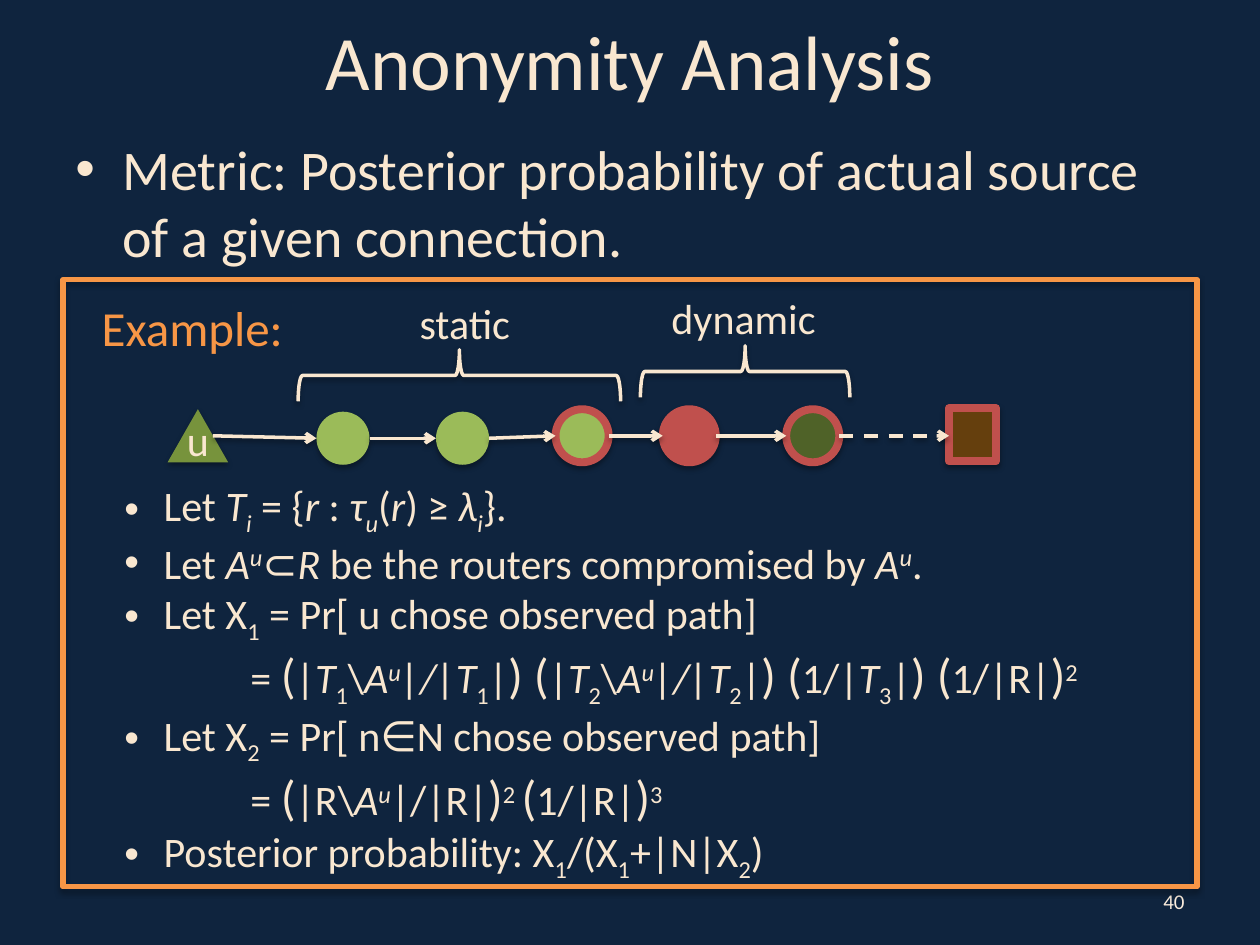
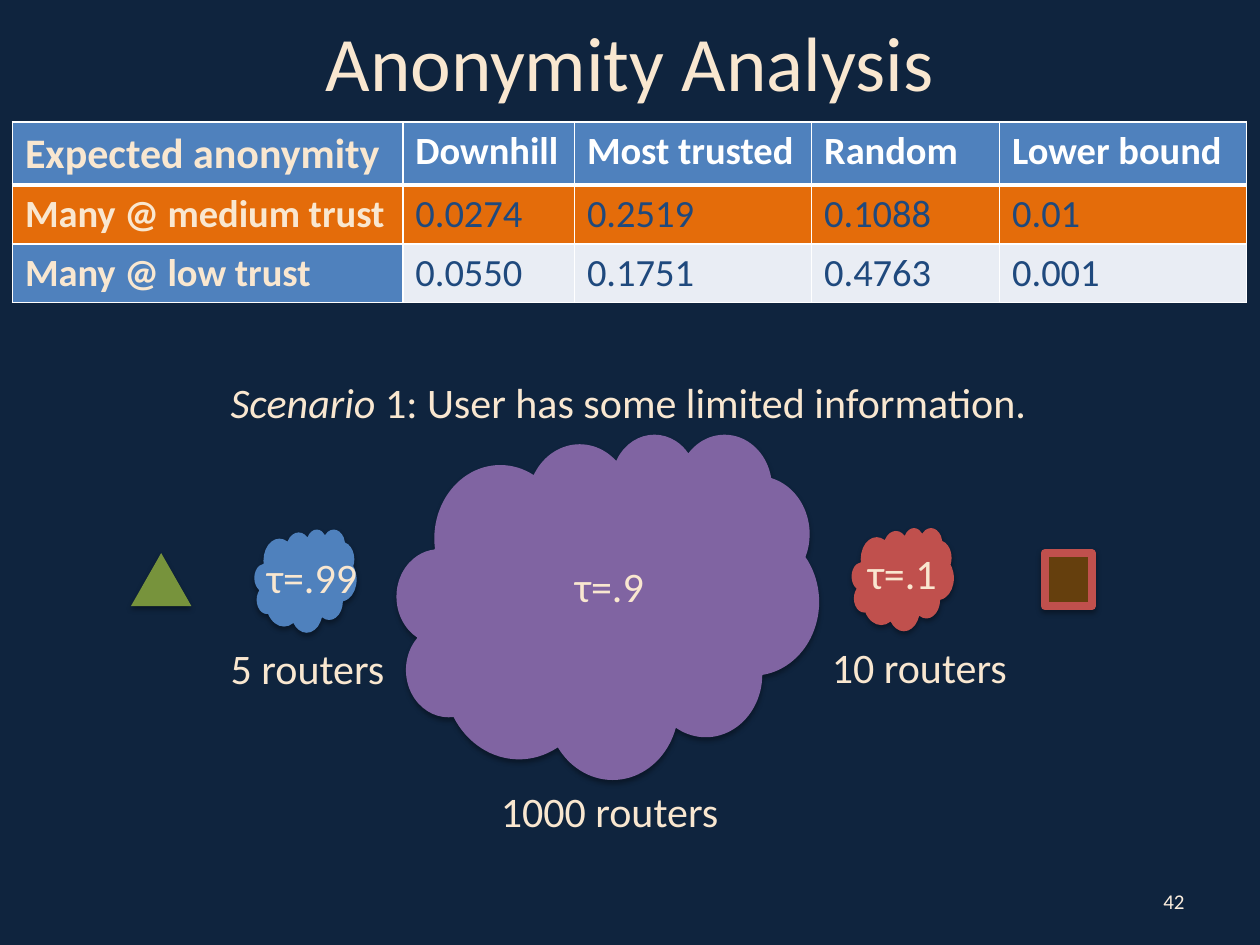
from itertools import pairwise

from lxml.etree import SubElement
from pptx import Presentation
from pptx.dml.color import RGBColor
from pptx.enum.dml import MSO_LINE
from pptx.enum.shapes import MSO_CONNECTOR, MSO_SHAPE
from pptx.enum.text import MSO_ANCHOR, PP_ALIGN
from pptx.oxml.ns import qn
from pptx.util import Cm, Pt

FONT = "Calibri"
NAVY, CREAM, PALE_CREAM = "0F243E", "F9E7D0", "FBEDDD"
ORANGE, DEEP_ORANGE = "F79646", "E46C0A"
RED, BROWN, BLUE, PURPLE = "C0504D", "653F0D", "4F81BD", "8064A2"
LEAF, OLIVE, MOSS = "9BBB59", "77933C", "4F6228"
WHITE, INK, ICE = "FFFFFF", "1F497D", "E9EDF4"
LEFT, CENTER, RIGHT = PP_ALIGN.LEFT, PP_ALIGN.CENTER, PP_ALIGN.RIGHT

NODE = 1.07
SOURCE_WIDTH = 1.22
BULLET = "•"
BREAK = ("\n", "")
INDENTED_EQUALS = ("\t\t= ", "")
OPEN, CLOSE, CLOSE_OPEN = ("(", "L"), (")", "L"), (") (", "L")
COMPROMISED = [("A", "i"), ("u", "i^")]


def color(hex_code):
    """Turn a hex string into a colour."""
    return RGBColor.from_string(hex_code)


def add_spans(para, spans, size=24, ink=CREAM, bold=False):
    """Add (text, marks) runs: i italic, _ subscript, ^ superscript, L large."""
    for text, marks in spans:
        if text == "\n":
            para.add_line_break()
            continue
        span = para.add_run()
        span.text = text
        font = span.font
        font.name, font.bold = FONT, bold
        font.size = Pt(28 if "L" in marks else size)
        font.color.rgb = color(ink)
        font.italic = "i" in marks
        if "_" in marks:
            font._element.set("baseline", "-25000")
        if "^" in marks:
            font._element.set("baseline", "30000")


def add_text(page, at, paragraphs, size=24, ink=CREAM, align=CENTER,
             anchor=MSO_ANCHOR.TOP, wrap=True, hang=0, before=0):
    """Add a text box; a hanging indent turns its paragraphs into bullets."""
    box = page.shapes.add_textbox(*map(Cm, at))
    frame = box.text_frame
    frame.word_wrap = wrap
    frame.vertical_anchor = anchor
    for number, spans in enumerate(paragraphs):
        para = frame.add_paragraph() if number else frame.paragraphs[0]
        para.alignment = align
        para.space_before = Pt(before)
        add_spans(para, spans, size, ink)
        if hang:
            properties = para._p.get_or_add_pPr()
            properties.set("marL", str(Cm(hang)))
            properties.set("indent", str(-Cm(hang)))
            properties.set("defTabSz", str(Cm(1.27)))
            SubElement(properties, qn("a:buFont"), typeface="Arial")
            SubElement(properties, qn("a:buChar"), char=BULLET)


def add_label(page, left, top, width, text, align=CENTER):
    """Add a one-line label."""
    add_text(page, (left, top, width, 1.27), [[(text, "")]], align=align)


def add_shadow(shape, opacity):
    """Give a shape or connector a soft shadow below it."""
    effects = SubElement(shape._element.spPr, qn("a:effectLst"))
    shadow = SubElement(effects, qn("a:outerShdw"), blurRad=str(Pt(3.1)),
                        dist=str(Pt(1.8)), dir="5400000", rotWithShape="0")
    black = SubElement(shadow, qn("a:srgbClr"), val="000000")
    SubElement(black, qn("a:alpha"), val=str(opacity * 1000))


def add_figure(page, kind, at, fill=None, outline=None, weight=4.5, turn=0):
    """Add a preset shape with an optional fill and outline."""
    shape = page.shapes.add_shape(kind, *map(Cm, at))
    shape.rotation = turn
    if fill:
        shape.fill.solid()
        shape.fill.fore_color.rgb = color(fill)
    else:
        shape.fill.background()
    if outline:
        shape.line.color.rgb = color(outline)
        shape.line.width = Pt(weight)
    else:
        shape.line.fill.background()
    add_shadow(shape, 35)


def add_arrow(page, start, end, dashed=False):
    """Draw an arrow between two points."""
    arrow = page.shapes.add_connector(
        MSO_CONNECTOR.STRAIGHT, *map(Cm, start + end))
    arrow.line.color.rgb = color(CREAM)
    arrow.line.width = Pt(2)
    if dashed:
        arrow.line.dash_style = MSO_LINE.DASH
    SubElement(arrow.line._get_or_add_ln(), qn("a:tailEnd"), type="arrow")
    add_shadow(arrow, 38)


def add_brace(page, center, middle, span):
    """Draw a brace that opens downwards over a span."""
    depth = 1.04
    at = (center - depth / 2, middle - span / 2, depth, span)
    add_figure(page, MSO_SHAPE.LEFT_BRACE, at, outline=CREAM, weight=2, turn=90)


def add_source(page, left, top):
    """Draw the triangle that stands for the user."""
    add_figure(page, MSO_SHAPE.ISOSCELES_TRIANGLE,
               (left, top, SOURCE_WIDTH, NODE), OLIVE)


def add_destination(page, left, top):
    """Draw the square that stands for the destination."""
    add_figure(page, MSO_SHAPE.RECTANGLE, (left, top, 0.95, NODE), BROWN, RED)


def add_page(deck, number, title_height):
    """Add a page with the shared background, title and number."""
    page = deck.slides.add_slide(deck.slide_layouts[6])
    page.background.fill.solid()
    page.background.fill.fore_color.rgb = color(NAVY)
    add_text(page, (1.27, 0, 22.86, title_height),
             [[("Anonymity Analysis", "")]], size=44, anchor=MSO_ANCHOR.MIDDLE)
    add_text(page, (18.2, 17.66, 5.93, 1.01), [[(number, "")]], size=12,
             ink=PALE_CREAM, align=RIGHT, anchor=MSO_ANCHOR.MIDDLE)
    return page


def add_route(page):
    """Draw the chain of routers from the user to the destination."""
    upper, lower = 8.25, 8.3
    destination = 19.13
    routers = [
        (6.38, lower, LEAF, None),
        (8.79, lower, LEAF, None),
        (11.2, upper, LEAF, RED),
        (13.36, upper, RED, RED),
        (15.85, upper, MOSS, RED),
    ]
    add_destination(page, destination, 8.23)
    add_source(page, 3.38, upper)
    stops = [(4.29, 4.29, upper + NODE / 2)]
    for left, top, fill, outline in routers:
        add_figure(page, MSO_SHAPE.OVAL, (left, top, NODE, NODE), fill, outline)
        stops.append((left, left + NODE, top + NODE / 2))
    stops.append((destination, destination, upper + NODE / 2))
    for (_, right, start), (left, _, end) in pairwise(stops):
        add_arrow(page, (right, start), (left, end), left == destination)
    add_label(page, 3.38, 8.23, SOURCE_WIDTH, "u")


def trusted_share(level):
    """Give the spans of the uncompromised share of one trust level."""
    subset = [("T", "i"), (level, "_")]
    return [("|", ""), *subset, ("\\", ""), *COMPROMISED,
            ("|/|", "i"), *subset, ("|", "")]


def build_metric(deck):
    """Build the page with the metric and its worked example."""
    page = add_page(deck, "40", 2.39)
    metric = "Metric: Posterior probability of actual source of a given connection."
    add_text(page, (1.27, 2.59, 22.86, 13.34), [[(metric, "")]],
             size=32, align=LEFT, hang=0.95, before=6.4)
    add_route(page)
    add_figure(page, MSO_SHAPE.RECTANGLE, (1.27, 5.64, 22.86, 12.24),
               outline=ORANGE, weight=3)
    add_text(page, (1.8, 5.87, 4.22, 1.45), [[("Example:", "")]],
             size=28, ink=ORANGE, align=LEFT, wrap=False)
    steps = [
        [("Let ", ""), ("T", "i"), ("i", "i_"), (" = {", ""), ("r", "i"),
         (" : ", ""), ("τ", "i"), ("u", "i_"), ("(", ""), ("r", "i"),
         (") ≥ ", ""), ("λ", "i"), ("i", "i_"), ("}.", "")],
        [("Let ", ""), *COMPROMISED, ("⊂", ""), ("R", "i"),
         (" be the routers compromised by ", ""), *COMPROMISED, (".", "")],
        [("Let X", ""), ("1", "_"), (" = Pr[ u chose observed path]", ""),
         BREAK, INDENTED_EQUALS, OPEN, *trusted_share("1"), CLOSE_OPEN,
         *trusted_share("2"), CLOSE_OPEN, ("1/|", ""), ("T", "i"), ("3", "_"),
         ("|", ""), CLOSE_OPEN, ("1/|R|", ""), CLOSE, ("2", "^")],
        [("Let X", ""), ("2", "_"), (" = Pr[ n∈N chose observed path]", ""),
         BREAK, INDENTED_EQUALS, OPEN, ("|R\\", ""), *COMPROMISED,
         ("|/|R|", ""), CLOSE, ("2", "^"), (" ", "L^"), OPEN, ("1/|R|", ""),
         CLOSE, ("3", "^")],
        [("Posterior probability: X", ""), ("1", "_"), ("/(X", ""), ("1", "_"),
         ("+|N|X", ""), ("2", "_"), (")", "")],
    ]
    add_text(page, (2.26, 9.55, 20.83, 7.77), steps, align=LEFT, hang=0.79)
    add_brace(page, 9.26, 7.57, 6.5)
    add_brace(page, 15.02, 7.49, 4.22)
    add_label(page, 7.16, 5.87, 4.42, "static")
    add_label(page, 12.78, 5.77, 4.42, "dynamic")


def style_cell(cell, text, fill, ink, size, bold, top, bottom):
    """Fill one table cell and rule its four edges in white."""
    properties = cell._tc.get_or_add_tcPr()
    for edge, weight in (("L", 1), ("R", 1), ("T", top), ("B", bottom)):
        rule = SubElement(properties, qn(f"a:ln{edge}"), w=str(Pt(weight)))
        paint = SubElement(rule, qn("a:solidFill"))
        SubElement(paint, qn("a:srgbClr"), val=WHITE)
    cell.fill.solid()
    cell.fill.fore_color.rgb = color(fill)
    add_spans(cell.text_frame.paragraphs[0], [(text, "")], size, ink, bold)


def add_results(page):
    """Add the table of expected anonymity."""
    rows = [
        ("Expected anonymity", "Downhill", "Most trusted", "Random", "Lower bound"),
        ("Many @ medium trust", "0.0274", "0.2519", "0.1088", "0.01"),
        ("Many @ low trust", "0.0550", "0.1751", "0.4763", "0.001"),
    ]
    fills = [(BLUE, BLUE), (DEEP_ORANGE, DEEP_ORANGE), (BLUE, ICE)]
    widths = [7.87, 3.46, 4.78, 3.79, 4.98]
    height = 1.04
    at = (0.25, 2.46, sum(widths), height * len(rows))
    table = page.shapes.add_table(len(rows), len(widths), *map(Cm, at)).table
    for column, width in zip(table.columns, widths):
        column.width = Cm(width)
    for r, (values, (first_fill, fill)) in enumerate(zip(rows, fills)):
        table.rows[r].height = Cm(height)
        top, bottom = (3 if r == 1 else 1), (3 if r == 0 else 1)
        for c, text in enumerate(values):
            ink = CREAM if c == 0 else WHITE if r == 0 else INK
            style_cell(table.cell(r, c), text, fill if c else first_fill, ink,
                       24 if r == c == 0 else 22, r == 0 or c == 0, top, bottom)


def build_scenario(deck):
    """Build the page with the results and the first scenario."""
    page = add_page(deck, "42", 2.44)
    add_destination(page, 21.06, 11.15)
    add_source(page, 2.64, 11.15)
    add_text(page, (2.34, 7.47, 20.85, 1.27),
             [[("Scenario ", "i"), ("1: User has some limited information. ", "")]])
    clouds = [
        ((5.13, 10.67, 2.06, 2.08), BLUE),
        ((17.17, 10.64, 2.06, 2.08), RED),
        ((8, 8.74, 8.51, 6.96), PURPLE),
    ]
    for at, fill in clouds:
        add_figure(page, MSO_SHAPE.CLOUD, at, fill)
    add_label(page, 5.13, 11, 2.51, "τ=.99", LEFT)
    add_label(page, 11, 11.18, 2.57, "τ=.9")
    add_label(page, 17.15, 10.92, 2.08, "τ=.1")
    add_label(page, 4.17, 12.83, 4.06, "5 routers")
    add_label(page, 9.42, 15.72, 5.74, "1000 routers")
    add_label(page, 15.98, 12.8, 5.11, "10 routers")
    add_results(page)


def main():
    """Build both pages and save the deck."""
    deck = Presentation()
    deck.slide_width, deck.slide_height = Cm(25.4), Cm(19.05)
    build_metric(deck)
    build_scenario(deck)
    deck.save("out.pptx")


if __name__ == "__main__":
    main()
